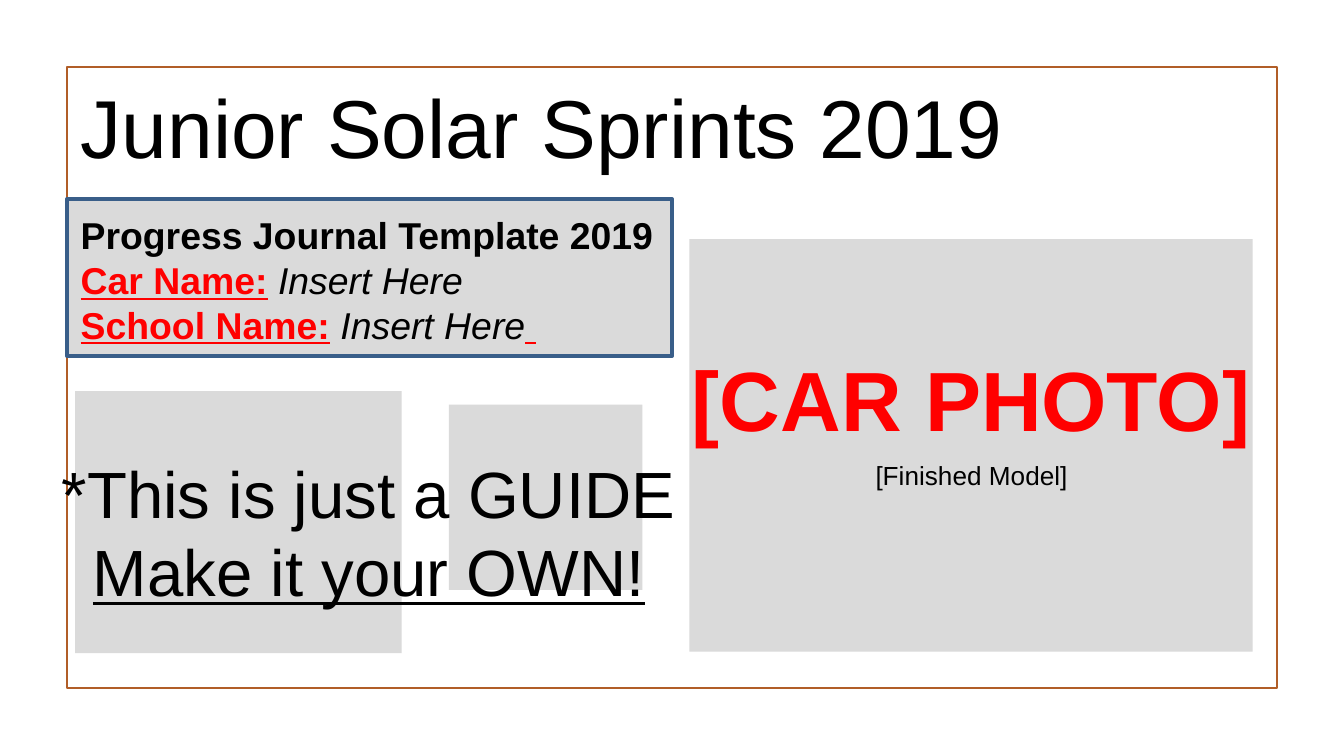
from pptx import Presentation
from pptx.dml.color import RGBColor
from pptx.enum.shapes import MSO_SHAPE as Shape
from pptx.enum.text import MSO_ANCHOR as Anchor, MSO_AUTO_SIZE as Fit, PP_ALIGN as Align
from pptx.util import Inches, Pt
from lxml.etree import SubElement

BLACK = RGBColor(0x00, 0x00, 0x00)
RED = RGBColor(0xFF, 0x00, 0x00)
GREY = RGBColor(0xDA, 0xDA, 0xDA)
BROWN = RGBColor(0xB1, 0x5E, 0x28)
BLUE = RGBColor(0x39, 0x5E, 0x89)

PLAIN = {}
BOLD = {"bold": True}
ITALIC = {"italic": True}
LINED = {"underline": True}
LABEL = {"bold": True, "underline": True, "color": RED}
ALERT = {"bold": True, "color": RED}

CARD = (0.5, 1.48, 4.5, 1.17)


def place(item, spot):
    item.left, item.top, item.width, item.height = map(Inches, spot)


def add_run(para, text, size, bold=False, italic=False, underline=False, color=BLACK):
    run = para.add_run()
    run.text = text
    font = run.font
    font.name, font.size = "Arial", Pt(size)
    font.bold, font.italic, font.underline = bold, italic, underline
    font.color.rgb = color


def write(frame, lines, size, align):
    for i, line in enumerate(lines):
        para = frame.add_paragraph() if i else frame.paragraphs[0]
        para.alignment = align
        para.line_spacing = 1.0
        para.space_before = Pt(0)
        for text, style in line:
            add_run(para, text, size, **style)


def fill_holder(holder, spot, lines, size, anchor):
    place(holder, spot)
    frame = holder.text_frame
    frame.auto_size = Fit.NONE
    frame.word_wrap = True
    frame.vertical_anchor = anchor
    frame.margin_left = frame.margin_right = Inches(0.1)
    frame.margin_top = frame.margin_bottom = Inches(0.1)
    write(frame, lines, size, Align.LEFT)


def clear_bullets(frame):
    for para in frame.paragraphs:
        props = para._p.get_or_add_pPr()
        props.set("marL", "0")
        props.set("indent", "0")
        SubElement(props, "{http://schemas.openxmlformats.org/drawingml/2006/main}buNone")


def add_box(slide, spot, fill=None, line=None, width=1):
    box = slide.shapes.add_shape(Shape.RECTANGLE, *map(Inches, spot))
    box.shadow.inherit = False
    if fill is None:
        box.fill.background()
    else:
        box.fill.solid()
        box.fill.fore_color.rgb = fill
    if line is None:
        box.line.fill.background()
    else:
        box.line.color.rgb = line
        box.line.width = Pt(width)
    return box


def add_text(slide, spot, lines, size, wrap=True, fit=Fit.SHAPE_TO_FIT_TEXT):
    frame = slide.shapes.add_textbox(*map(Inches, spot)).text_frame
    frame.word_wrap = wrap
    frame.auto_size = fit
    write(frame, lines, size, Align.CENTER)


def main():
    deck = Presentation()
    deck.slide_width = Inches(10)
    deck.slide_height = deck.slide_width * 9 // 16
    slide = deck.slides.add_slide(deck.slide_layouts[1])

    border = add_box(slide, (0.5, 0.5, 9, 4.62), line=BROWN, width=1.25)
    slide.shapes._spTree.insert(2, border._element)

    fill_holder(slide.shapes.title, (0.5, 0.29, 8, 1.11),
                [[("Junior Solar Sprints 2019", PLAIN)]], 44, Anchor.BOTTOM)

    body = slide.placeholders[1]
    fill_holder(body, CARD, [
        [("Progress Journal Template 2019", BOLD)],
        [("Car Name:", LABEL), (" ", PLAIN), ("Insert Here", ITALIC)],
        [("School Name:", LABEL), (" ", PLAIN), ("Insert Here", ITALIC), (" ", LABEL)],
    ], 20, Anchor.TOP)
    clear_bullets(body.text_frame)
    body.fill.solid()
    body.fill.fore_color.rgb = GREY

    add_box(slide, (5.13, 1.78, 4.19, 3.07), fill=GREY)
    add_text(slide, (4.59, 2.54, 5.27, 1.3), [[("[CAR PHOTO]", ALERT)]], 45, fit=Fit.NONE)
    add_box(slide, CARD, line=BLUE, width=2)
    add_box(slide, (0.56, 2.91, 2.43, 1.95), fill=GREY)
    add_box(slide, (3.34, 3.01, 1.44, 1.38), fill=GREY)
    add_text(slide, (0.34, 3.32, 4.81, 1.28), [
        [("*This is just a GUIDE", PLAIN)],
        [("Make it your OWN!", LINED)],
    ], 35, wrap=False)
    add_text(slide, (6.38, 3.37, 1.7, 0.34), [[("[Finished Model]", PLAIN)]], 14)

    deck.save("out.pptx")


if __name__ == "__main__":
    main()
